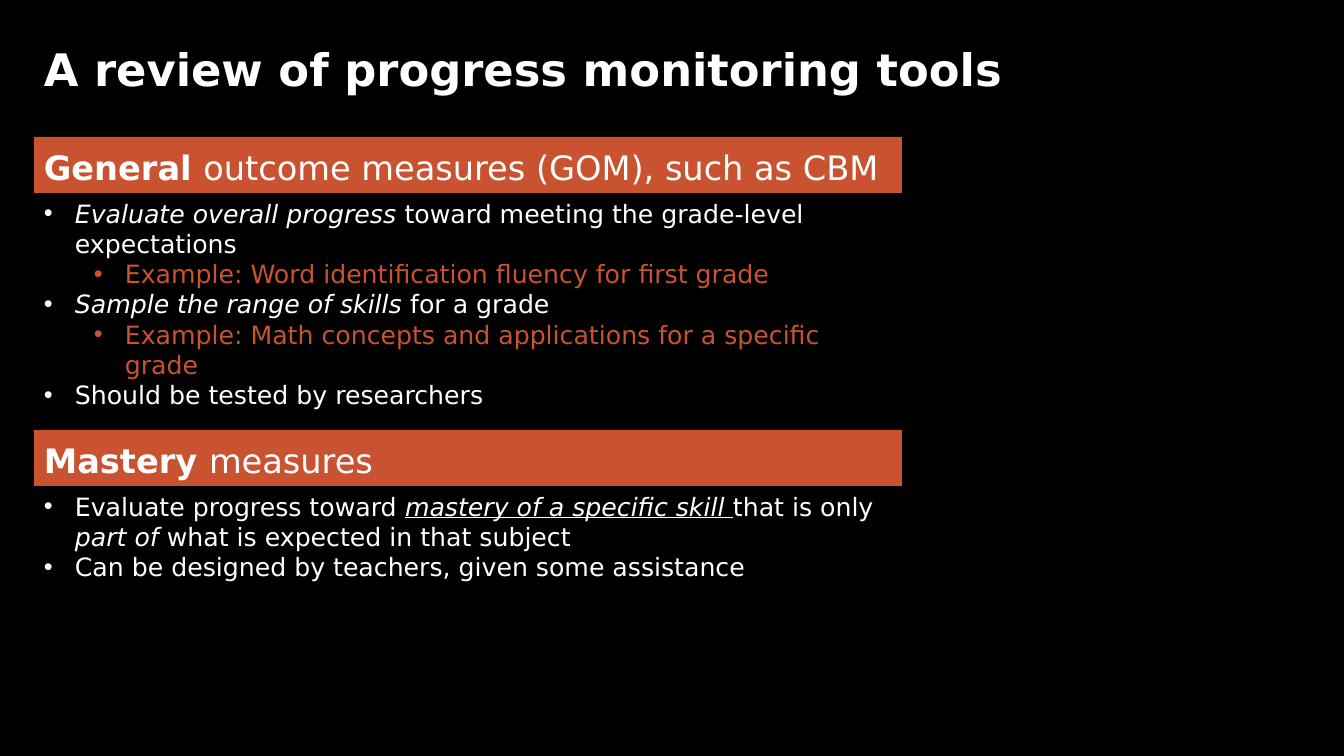
import pptx
import pptx.dml.color
import pptx.enum.shapes
import pptx.enum.text
import pptx.oxml
import pptx.oxml.ns
import pptx.util

FONT = "DejaVu Sans"
BLACK, WHITE, RUST = "000000", "FFFFFF", "C95331"

# A run is (text, style letters): b bold, i italic, u underlined.
TITLE = [("A review of progress monitoring tools", "b")]

# Each section: bar top, heading runs, list height, bullets as (level, runs).
SECTIONS = [
    (137, [("General ", "b"), ("outcome measures (GOM), such as CBM", "")], 224, [
        (0, [("Evaluate overall progress", "i"),
             (" toward meeting the grade-level expectations", "")]),
        (1, [("Example: Word identification fluency for first grade", "")]),
        (0, [("Sample the range of skills ", "i"), ("for a grade", "")]),
        (1, [("Example: Math concepts and applications for a specific grade", "")]),
        (0, [("Should be tested by researchers", "")]),
    ]),
    (430, [("Mastery ", "b"), ("measures", "")], 102, [
        (0, [("Evaluate progress toward ", ""), ("mastery of a specific skill ", "iu"),
             ("that is only ", ""), ("part of ", "i"),
             ("what is expected in that subject", "")]),
        (0, [("Can be designed by teachers, given some assistance", "")]),
    ]),
]

SLIDE_WIDTH, SLIDE_HEIGHT = 1344, 756
LEFT, SECTION_WIDTH, BAR_HEIGHT = 34, 868, 56
TITLE_TOP, TITLE_WIDTH, TITLE_HEIGHT = 25, 1277, 81
HANGING, LEVEL_STEP = 31, 50
LEVEL_COLORS = [WHITE, RUST]


def px(length):
    return pptx.util.Emu(round(length * 914400 / 100.8))


def rgb(color):
    return pptx.dml.color.RGBColor.from_string(color)


def add_runs(paragraph, runs, size, color):
    for text, style in runs:
        run = paragraph.add_run()
        run.text = text
        font = run.font
        font.name, font.size = FONT, pptx.util.Pt(size)
        font.color.rgb = rgb(color)
        font.bold, font.italic, font.underline = (letter in style for letter in "biu")


def add_line(shape, runs, size):
    """Write one left-aligned, vertically centred paragraph."""
    frame = shape.text_frame
    frame.word_wrap = True
    frame.vertical_anchor = pptx.enum.text.MSO_ANCHOR.MIDDLE
    paragraph = frame.paragraphs[0]
    paragraph.alignment = pptx.enum.text.PP_ALIGN.LEFT
    paragraph.line_spacing = 1.1
    add_runs(paragraph, runs, size, WHITE)


def add_bar(slide, top, runs):
    bar = slide.shapes.add_shape(
        pptx.enum.shapes.MSO_SHAPE.RECTANGLE,
        px(LEFT), px(top), px(SECTION_WIDTH), px(BAR_HEIGHT))
    bar.shadow.inherit = False
    bar.fill.solid()
    bar.fill.fore_color.rgb = rgb(RUST)
    bar.line.fill.background()
    add_line(bar, runs, 24)


def set_bullet(paragraph, level):
    paragraph.level = level
    properties = paragraph._p.get_or_add_pPr()
    properties.set("marL", str(px(HANGING + level * LEVEL_STEP)))
    properties.set("indent", str(px(-HANGING)))
    namespace = pptx.oxml.ns.nsdecls("a")
    for element in (f'<a:buFont {namespace} typeface="Arial"/>',
                    f'<a:buChar {namespace} char="•"/>'):
        properties.append(pptx.oxml.parse_xml(element))


def add_bullets(slide, top, height, bullets):
    box = slide.shapes.add_textbox(px(LEFT), px(top), px(SECTION_WIDTH), px(height))
    frame = box.text_frame
    frame.word_wrap = True
    frame.auto_size = pptx.enum.text.MSO_AUTO_SIZE.SHAPE_TO_FIT_TEXT
    for index, (level, runs) in enumerate(bullets):
        paragraph = frame.add_paragraph() if index else frame.paragraphs[0]
        set_bullet(paragraph, level)
        add_runs(paragraph, runs, 18, LEVEL_COLORS[level])


def main():
    presentation = pptx.Presentation()
    presentation.slide_width = px(SLIDE_WIDTH)
    presentation.slide_height = px(SLIDE_HEIGHT)
    slide = presentation.slides.add_slide(presentation.slide_layouts[6])
    slide.background.fill.solid()
    slide.background.fill.fore_color.rgb = rgb(BLACK)

    title = slide.shapes.add_textbox(
        px(LEFT), px(TITLE_TOP), px(TITLE_WIDTH), px(TITLE_HEIGHT))
    add_line(title, TITLE, 32)
    for top, heading, height, bullets in SECTIONS:
        add_bar(slide, top, heading)
        add_bullets(slide, top + BAR_HEIGHT, height, bullets)
    presentation.save("out.pptx")


if __name__ == "__main__":
    main()
